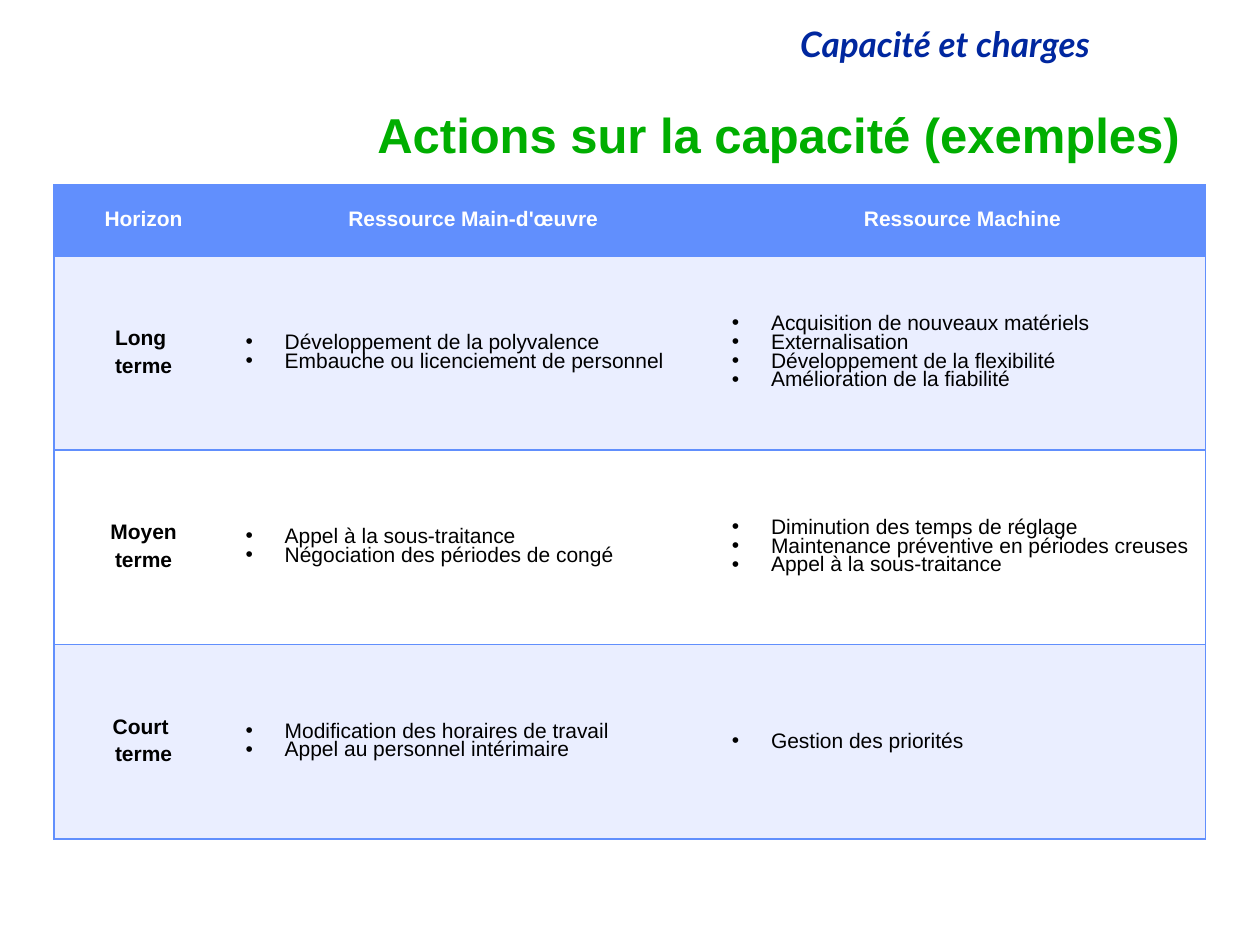
import pptx
import pptx.util
import pptx.dml.color
import pptx.enum.text
import pptx.oxml
import pptx.oxml.ns
import lxml.etree

ALIGN = pptx.enum.text.PP_ALIGN
MIDDLE = pptx.enum.text.MSO_ANCHOR.MIDDLE
BLUE, PALE, WHITE, BLACK = "618FFD", "EAEEFF", "FFFFFF", "000000"
NAVY, GREEN = "00279F", "00AE00"


def rgb(value):
    return pptx.dml.color.RGBColor.from_string(value)


def set_all(target, values):
    for name, value in values.items():
        setattr(target, name, value)


class Deck:
    columns, rows = 100, 75
    tight = {"line_spacing": 0.8}
    loose = {"line_spacing": 0.9, "space_before": pptx.util.Pt(3.6)}
    centred = {"alignment": ALIGN.CENTER}

    def __init__(self):
        self.prs = pptx.Presentation()
        self.prs.slide_width = pptx.util.Inches(10)
        self.prs.slide_height = pptx.util.Inches(7.5)
        self.s = self.prs.slides.add_slide(self.prs.slide_layouts[6])

    def x(self, columns):
        return round(self.prs.slide_width * columns / self.columns)

    def y(self, rows):
        return round(self.prs.slide_height * rows / self.rows)

    def box(self, left, top, width, height):
        return self.x(left), self.y(top), self.x(width), self.y(height)

    def add_lines(self, tf, lines, para, color, size=12, bullet=False, **font):
        for i, line in enumerate(lines):
            p = tf.add_paragraph() if i else tf.paragraphs[0]
            set_all(p, para)
            if bullet:
                self.bullet(p)
            r = p.add_run()
            r.text = line
            set_all(r.font, {"name": "Arial", "size": pptx.util.Pt(size), "bold": True, **font})
            r.font.color.rgb = rgb(color)

    def bullet(self, p):
        pPr = p._p.get_or_add_pPr()
        indent = self.x(3.1)
        pPr.set("marL", str(indent))
        pPr.set("indent", str(-indent))
        lxml.etree.SubElement(pPr, pptx.oxml.ns.qn("a:buFont"), typeface="Arial")
        lxml.etree.SubElement(pPr, pptx.oxml.ns.qn("a:buChar"), char="•")

    def heading(self, place, text, color, size, **font):
        tf = self.s.shapes.add_textbox(*self.box(*place)).text_frame
        set_all(tf, {"word_wrap": True, "vertical_anchor": MIDDLE})
        para = {"alignment": ALIGN.RIGHT, "line_spacing": 0.9}
        self.add_lines(tf, [text], para, color, size, **font)

    def border(self, cell, side, color):
        fill = f'<a:solidFill><a:srgbClr val="{color}"/></a:solidFill>' if color else "<a:noFill/>"
        ns = pptx.oxml.ns.nsdecls("a")
        line = pptx.oxml.parse_xml(f'<a:ln{side} {ns} w="12700">{fill}</a:ln{side}>')
        cell._tc.get_or_add_tcPr().append(line)

    def cell(self, cell, fill, edges, lines, **style):
        for side in "LRTB":
            self.border(cell, side, BLUE if side in edges else None)
        cell.fill.solid()
        cell.fill.fore_color.rgb = rgb(fill)
        cell.vertical_anchor = MIDDLE
        self.add_lines(cell.text_frame, lines, **style)

    def table(self, place, widths, heights, header, body):
        shape = self.s.shapes.add_table(len(heights), len(widths), *self.box(*place))
        table = shape.table
        for column, width in zip(table.columns, widths):
            column.width = self.x(width)
        for row, height in zip(table.rows, heights):
            row.height = self.y(height)
        for i, row in enumerate([header] + body):
            for j, lines in enumerate(row):
                edges = "TB" + {0: "L", len(widths) - 1: "R"}.get(j, "")
                is_bullet = i > 0 and j > 0
                fill = BLUE if i == 0 else PALE if i % 2 else WHITE
                is_tight = len(lines) > 1 if is_bullet else (i, j) == (0, 1)
                para = {**(self.tight if is_tight else self.loose),
                        **({} if is_bullet else self.centred)}
                self.cell(table.cell(i, j), fill, edges, lines, para=para,
                          color=BLACK if i else WHITE, bullet=is_bullet, bold=not is_bullet)


def main():
    deck = Deck()
    deck.heading((11.7, 1.7, 75.8, 4), "Capacité et charges", NAVY, 20, name="Lato", italic=True)
    deck.heading((15.4, 8.4, 79.2, 5), "Actions sur la capacité (exemples)", GREEN, 28)
    deck.table(
        (4.3, 14.7, 91.4, 51.8), [14.2, 38.6, 38.6], [5.6] + [15.43] * 3,
        [["Horizon"], ["Ressource Main-d'œuvre "], ["Ressource Machine"]],
        [
            [["Long ", "terme"],
             ["Développement de la polyvalence", "Embauche ou licenciement de personnel"],
             ["Acquisition de nouveaux matériels", "Externalisation",
              "Développement de la flexibilité", "Amélioration de la fiabilité"]],
            [["Moyen", "terme"],
             ["Appel à la sous-traitance", "Négociation des périodes de congé"],
             ["Diminution des temps de réglage", "Maintenance préventive en périodes creuses",
              "Appel à la sous-traitance"]],
            [["Court ", "terme"],
             ["Modification des horaires de travail", "Appel au personnel intérimaire"],
             ["Gestion des priorités"]],
        ])
    deck.prs.save("out.pptx")


if __name__ == "__main__":
    main()
